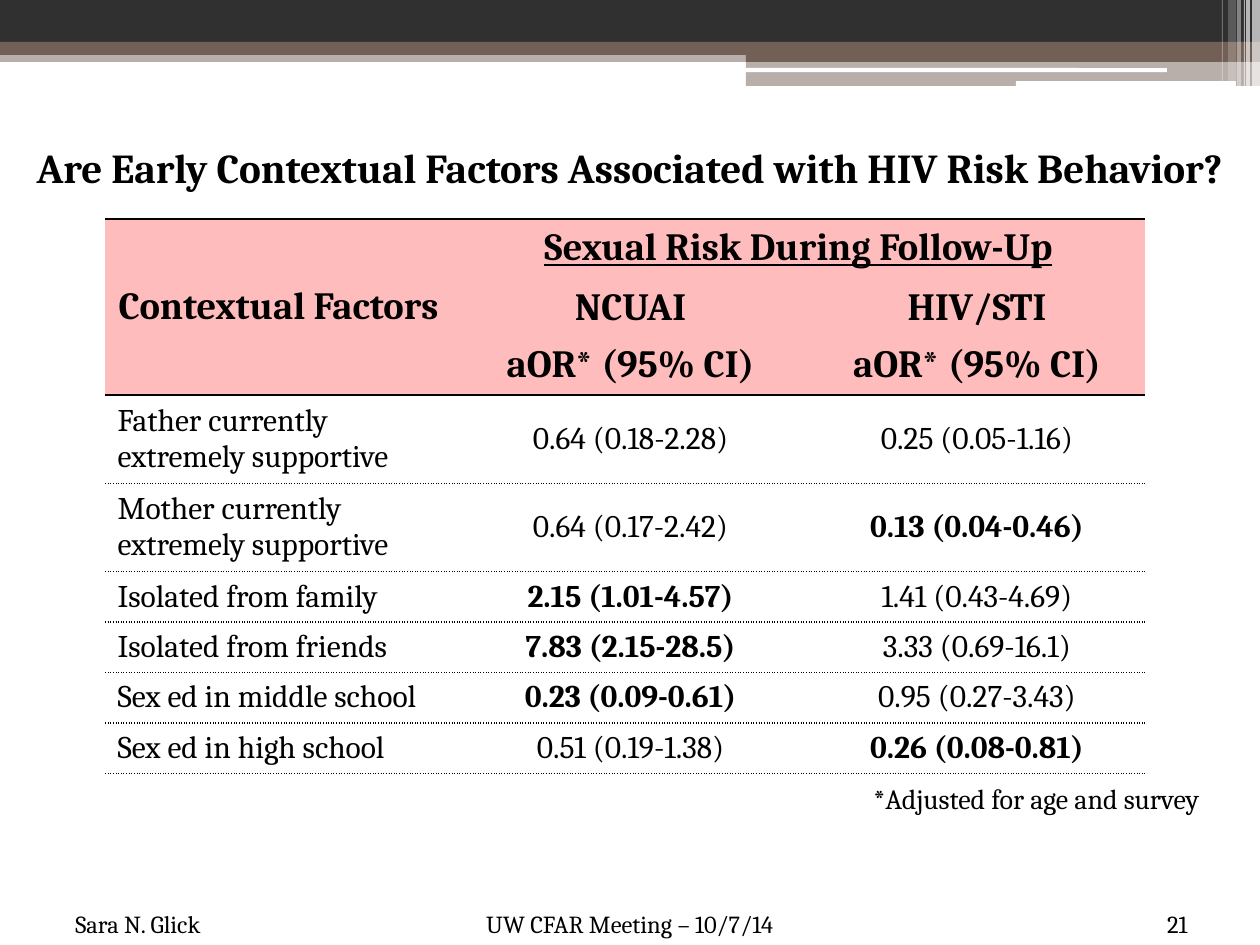
import dataclasses

import lxml.etree
import pptx
import pptx.dml.color
import pptx.enum.shapes
import pptx.enum.text
import pptx.oxml
import pptx.oxml.ns
import pptx.util

SCALE = 914400 / 126
ALIGN = pptx.enum.text.PP_ALIGN
ANCHOR = pptx.enum.text.MSO_ANCHOR
KIND = pptx.enum.shapes.MSO_SHAPE
qn = pptx.oxml.ns.qn


@dataclasses.dataclass(frozen=True)
class Theme:
    font: str = "Cambria"
    ink: str = "000000"
    paper: str = "FFFFFF"
    dark: str = "303030"
    brown: str = "726056"
    pink: str = "FFBCBC"
    title: float = 23.5
    head: float = 22
    body: float = 18
    note: float = 16
    foot: float = 14
    gap: float = 7


THEME = Theme()

ROWS = [
    ("Father currently extremely supportive", "0.64 (0.18-2.28)", "0.25 (0.05-1.16)"),
    ("Mother currently extremely supportive", "0.64 (0.17-2.42)", "0.13 (0.04-0.46)"),
    ("Isolated from family", "2.15 (1.01-4.57)", "1.41 (0.43-4.69)"),
    ("Isolated from friends", "7.83 (2.15-28.5)", "3.33 (0.69-16.1)"),
    ("Sex ed in middle school", "0.23 (0.09-0.61)", "0.95 (0.27-3.43)"),
    ("Sex ed in high school", "0.51 (0.19-1.38)", "0.26 (0.08-0.81)"),
]
STRONG = {(1, 2), (2, 1), (3, 1), (4, 1), (5, 2)}


def px(n):
    return pptx.util.Emu(round(n * SCALE))


def tint(name):
    return pptx.dml.color.RGBColor.from_string(name)


def write(frame, text, size, bold=False, line=False, align=ALIGN.LEFT, gap=0):
    for i, part in enumerate(text.split("\n")):
        para = frame.add_paragraph() if i else frame.paragraphs[0]
        para.alignment = align
        para.space_before = pptx.util.Pt(gap)
        run = para.add_run()
        run.text = part
        font = run.font
        font.name = THEME.font
        font.size = pptx.util.Pt(size)
        font.bold = bold
        font.underline = line
        font.color.rgb = tint(THEME.ink)


def label(slide, box, text, size, align=ALIGN.LEFT, anchor=ANCHOR.BOTTOM):
    frame = slide.shapes.add_textbox(*map(px, box)).text_frame
    frame.word_wrap = True
    frame.vertical_anchor = anchor
    write(frame, text, size, align=align)


def bar(slide, box, fill, alpha=100, kind=KIND.RECTANGLE):
    shape = slide.shapes.add_shape(kind, *map(px, box))
    shape.shadow.inherit = False
    shape.line.fill.background()
    shape.fill.solid()
    shape.fill.fore_color.rgb = tint(fill)
    if kind == KIND.ROUNDED_RECTANGLE:
        shape.adjustments[0] = 0.17
    if alpha < 100:
        clr = shape.fill._xPr.find(".//" + qn("a:srgbClr"))
        lxml.etree.SubElement(clr, qn("a:alpha"), val=str(alpha * 1000))


def banner(slide, box):
    left, top, wide, high = box
    mid = left + 746
    part = wide - 746
    bar(slide, (left, top + 50, wide, 12), THEME.brown, 50)
    bar(slide, (left, top, wide, 42), THEME.dark)
    bar(slide, (left, top + 42, wide, 13), THEME.brown)
    bar(slide, (mid, top + 49, part, 13), THEME.brown)
    bar(slide, (mid, top + 61, part, 25), THEME.brown, 50)
    for x, y, w, h in [(745, 68, 422, 4), (1016, 81, 220, 5)]:
        bar(slide, (left + x, top + y, w, h), THEME.paper, kind=KIND.ROUNDED_RECTANGLE)
    stripes = [
        (8, 8, high, 65), (14, 4, high, 65), (16, 1, high, 60),
        (23, 4, high, 40), (32, 8, high - 5, 20), (38, 1, high - 5, 30),
    ]
    for back, w, h, alpha in stripes:
        bar(slide, (left + wide - back, top, w, h), THEME.paper, alpha)


def heading(slide, box, text):
    title = slide.shapes.title
    title.left, title.top, title.width, title.height = map(px, box)
    frame = title.text_frame
    frame.word_wrap = True
    frame.auto_size = pptx.enum.text.MSO_AUTO_SIZE.NONE
    frame.vertical_anchor = ANCHOR.TOP
    write(frame, text, THEME.title, bold=True, align=ALIGN.CENTER, gap=THEME.gap)


def border(cell, top, base):
    props = cell._tc.get_or_add_tcPr()
    sides = [("L", None), ("R", None), ("T", top), ("B", base)]
    for i, (side, dash) in enumerate(sides):
        line = lxml.etree.Element(qn("a:ln" + side), w="12700")
        if dash:
            fill = lxml.etree.SubElement(line, qn("a:solidFill"))
            lxml.etree.SubElement(fill, qn("a:srgbClr"), val=THEME.ink)
            lxml.etree.SubElement(line, qn("a:prstDash"), val=dash)
        else:
            lxml.etree.SubElement(line, qn("a:noFill"))
        props.insert(i, line)


def results(slide, box):
    count = len(ROWS) + 2
    grid = slide.shapes.add_table(count, 3, *map(px, box)).table
    grid.first_row = grid.horz_banding = False
    for col, wide in zip(grid.columns, (347, 357, 336)):
        col.width = px(wide)
    for row, high in zip(grid.rows, [57, 114, 85, 85] + [49] * 4):
        row.height = px(high)

    edges = ["solid", None, "solid"] + ["sysDot"] * (count - 2)
    for r in range(count):
        for c in range(3):
            cell = grid.cell(r, c)
            cell.vertical_anchor = ANCHOR.MIDDLE
            if r < 2:
                cell.fill.solid()
                cell.fill.fore_color.rgb = tint(THEME.pink)
            else:
                cell.fill.background()
            tall = r == 0 and c == 0
            border(cell, edges[r], edges[2 if tall else r + 1])

    grid.cell(0, 0).merge(grid.cell(1, 0))
    grid.cell(0, 1).merge(grid.cell(0, 2))
    heads = [
        (0, 0, "Contextual Factors"),
        (0, 1, "Sexual Risk During Follow-Up"),
        (1, 1, "NCUAI\naOR* (95% CI)"),
        (1, 2, "HIV/STI\naOR* (95% CI)"),
    ]
    for r, c, text in heads:
        write(grid.cell(r, c).text_frame, text, THEME.head, bold=True,
              line=(r, c) == (0, 1), align=ALIGN.CENTER, gap=THEME.gap)
    for r, row in enumerate(ROWS):
        for c, text in enumerate(row):
            write(grid.cell(r + 2, c).text_frame, text, THEME.body,
                  bold=(r, c) in STRONG,
                  align=ALIGN.CENTER if c else ALIGN.LEFT,
                  gap=0 if c else THEME.gap)


def footer(slide, box):
    left, top, wide, high = box
    label(slide, (left, top, 242, high), "Sara N. Glick", THEME.foot)
    label(slide, box, "UW CFAR Meeting – 10/7/14", THEME.foot, ALIGN.CENTER)
    label(slide, (left + wide - 84, top, 87, high), "21", THEME.foot, ALIGN.RIGHT)


def main():
    deck = pptx.Presentation()
    deck.slide_width, deck.slide_height = px(1260), px(945)
    slide = deck.slides.add_slide(deck.slide_layouts[5])
    banner(slide, (0, 0, 1260, 86))
    footer(slide, (63, 895, 1134, 50))
    heading(slide, (0, 136, 1260, 76),
            "Are Early Contextual Factors Associated with HIV Risk Behavior?")
    results(slide, (105, 219, 1040, 537))
    label(slide, (861, 775, 399, 47), "*Adjusted for age and survey",
          THEME.note, anchor=ANCHOR.TOP)
    deck.save("out.pptx")


if __name__ == "__main__":
    main()
